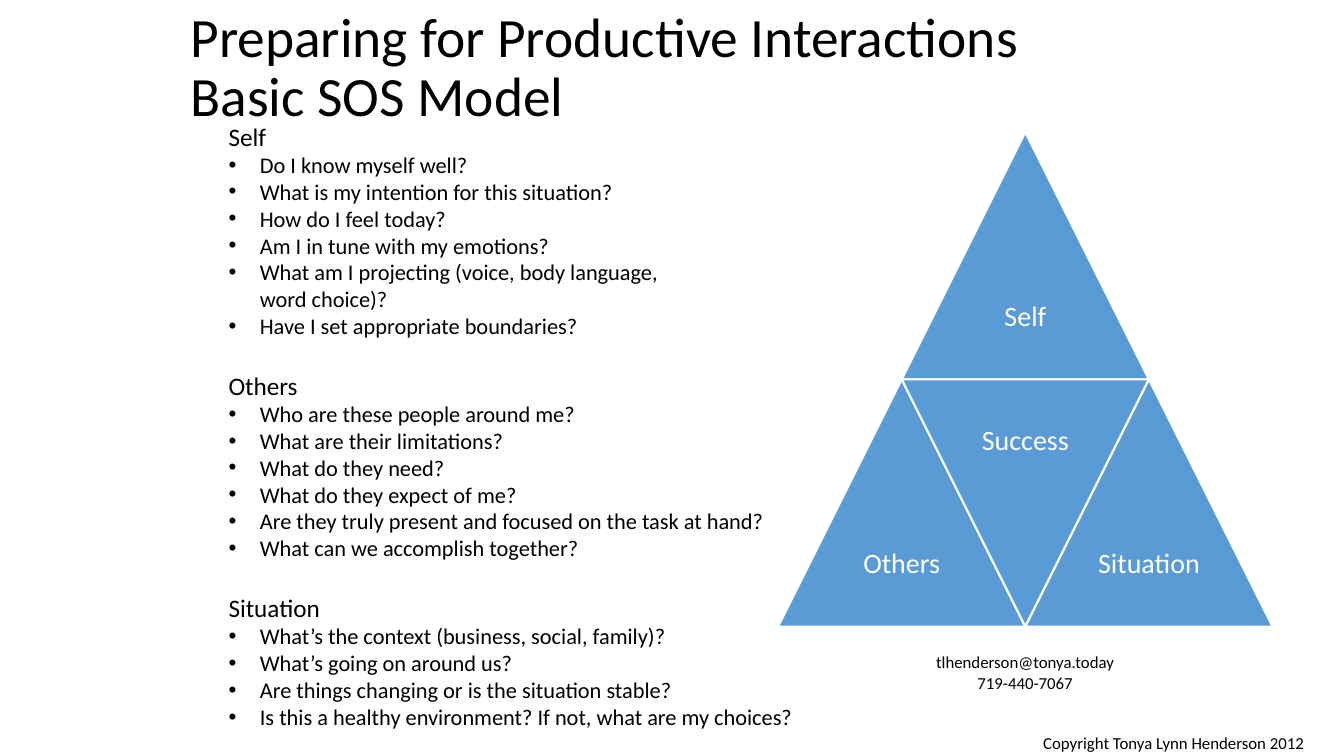
from pptx import Presentation
from pptx.dml.color import RGBColor
from pptx.enum.shapes import MSO_SHAPE
from pptx.enum.text import MSO_ANCHOR, PP_ALIGN
from pptx.oxml.ns import qn
from pptx.util import Cm, Pt
from lxml import etree

TRIANGLE = MSO_SHAPE.ISOSCELES_TRIANGLE
LEFT, CENTER = PP_ALIGN.LEFT, PP_ALIGN.CENTER
TOP, MIDDLE = MSO_ANCHOR.TOP, MSO_ANCHOR.MIDDLE
BLACK, WHITE, BLUE = "000000", "FFFFFF", "5B9BD5"


def color(value):
    return RGBColor.from_string(value)


def write(frame, text, size=16, ink=BLACK, align=LEFT, anchor=TOP,
          spacing=1.0, before=0, indent=0, bullet=False, wrap=True):
    """Add one paragraph, filling the frame's empty first one if unused."""
    frame.word_wrap = wrap
    frame.vertical_anchor = anchor
    paragraph = frame.paragraphs[0]
    if paragraph.runs:
        paragraph = frame.add_paragraph()
    paragraph.alignment = align
    paragraph.line_spacing = spacing
    paragraph.space_before = Pt(before)
    properties = paragraph._p.get_or_add_pPr()
    if indent:
        properties.set("marL", str(Cm(indent)))
    if bullet:
        properties.set("indent", str(-Cm(indent)))
        etree.SubElement(properties, qn("a:buFont")).set("typeface", "Arial")
        etree.SubElement(properties, qn("a:buChar")).set("char", "•")
    run = paragraph.add_run()
    run.text = text
    run.font.name = "Calibri"
    run.font.size = Pt(size)
    run.font.color.rgb = color(ink)


deck = Presentation()
deck.slide_width, deck.slide_height = Cm(33.87), Cm(19.05)
slide = deck.slides.add_slide(deck.slide_layouts[6])
shapes = slide.shapes

# Title
title = shapes.add_textbox(Cm(4.55), Cm(0.15), Cm(24.36), Cm(3.18)).text_frame
for line in ("Preparing for Productive Interactions", "Basic SOS Model"):
    write(title, line, size=39.6, anchor=MIDDLE, spacing=0.9)

# Questions by theme; a line in lower case continues the question above it
themes = {
    "Self": [
        "Do I know myself well?",
        "What is my intention for this situation?",
        "How do I feel today?",
        "Am I in tune with my emotions?",
        "What am I projecting (voice, body language,",
        "word choice)?",
        "Have I set appropriate boundaries?",
    ],
    "Others": [
        "Who are these people around me?",
        "What are their limitations?",
        "What do they need?",
        "What do they expect of me?",
        "Are they truly present and focused on the task at hand?",
        "What can we accomplish together?",
    ],
    "Situation": [
        "What’s the context (business, social, family)?",
        "What’s going on around us?",
        "Are things changing or is the situation stable?",
        "Is this a healthy environment? If not, what are my choices?",
    ],
}
questions = shapes.add_textbox(Cm(5.51), Cm(2.92), Cm(23.39), Cm(16.51)).text_frame
for theme, lines in themes.items():
    write(questions, theme, size=18, before=0 if theme == "Self" else 22)
    for line in lines:
        write(questions, line, indent=0.79, bullet=line[0].isupper())

# Copyright and contact
copyright_line = shapes.add_textbox(Cm(26.04), Cm(18.34), Cm(7.37), Cm(0.76)).text_frame
write(copyright_line, "Copyright Tonya Lynn Henderson 2012", size=12, wrap=False)
contact = shapes.add_textbox(Cm(23.32), Cm(16.31), Cm(5.03), Cm(1.27)).text_frame
for line in ("tlhenderson@tonya.today", "719-440-7067"):
    write(contact, line, size=12, align=CENTER, wrap=False)

# SOS pyramid: four equal triangles, placed in half-side columns and full rows
SIDE, PYRAMID_LEFT, PYRAMID_TOP = 6.23, 19.61, 3.33
parts = [("Self", 1, 0), ("Others", 0, 1), ("Success", 1, 1), ("Situation", 2, 1)]
for part, column, row in parts:
    left = PYRAMID_LEFT + column * SIDE / 2
    top = PYRAMID_TOP + row * SIDE
    inverted = part == "Success"
    triangle = shapes.add_shape(TRIANGLE, Cm(left), Cm(top), Cm(SIDE), Cm(SIDE))
    triangle.rotation = 180 if inverted else 0
    triangle.shadow.inherit = False
    triangle.fill.solid()
    triangle.fill.fore_color.rgb = color(BLUE)
    triangle.line.color.rgb = color(WHITE)
    triangle.line.width = Pt(1.5)

    # The label fills the square inside the triangle's wide half
    label_top = top if inverted else top + SIDE / 2
    label = shapes.add_textbox(Cm(left + SIDE / 4), Cm(label_top),
                               Cm(SIDE / 2), Cm(SIDE / 2)).text_frame
    label.margin_left = label.margin_right = Cm(0.2)
    label.margin_top = label.margin_bottom = Cm(0.2)
    write(label, part, size=20, ink=WHITE, align=CENTER, anchor=MIDDLE, spacing=0.9)

deck.save("out.pptx")
